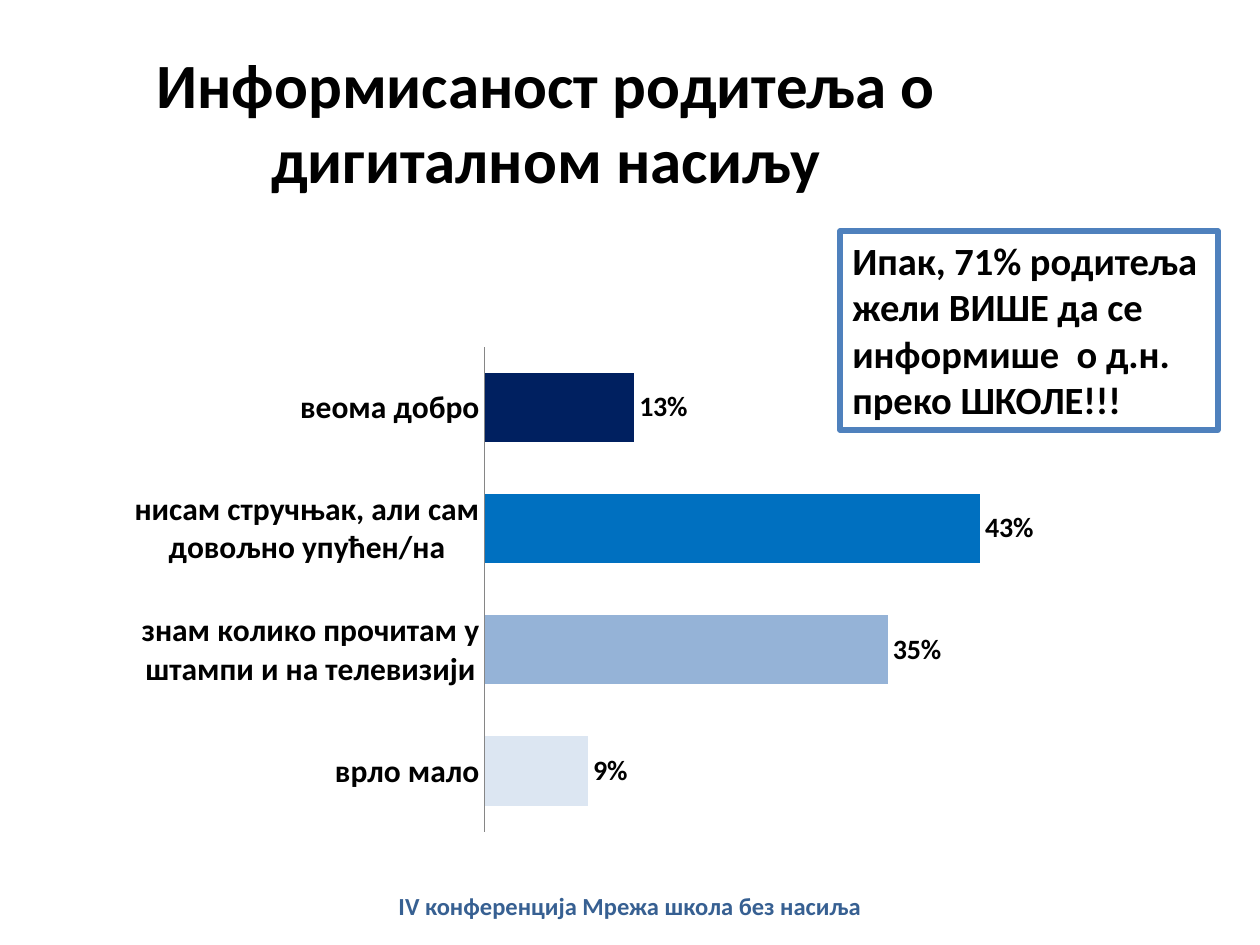
from dataclasses import dataclass

from lxml.etree import SubElement
from pptx import Presentation
from pptx.chart.data import CategoryChartData
from pptx.dml.color import RGBColor
from pptx.enum.chart import XL_CHART_TYPE, XL_LABEL_POSITION, XL_TICK_LABEL_POSITION, XL_TICK_MARK
from pptx.enum.shapes import MSO_SHAPE
from pptx.enum.text import MSO_ANCHOR, PP_ALIGN
from pptx.oxml import parse_xml
from pptx.oxml.ns import nsdecls, qn
from pptx.util import Emu, Pt

EMU_PER_PX = 914400 / 126
FONT = "Calibri"
COLORS = {
    "text": "000000",
    "footer": "376092",
    "accent": "4F81BD",
    "axis": "868686",
    "outline": "C00000",
}


@dataclass(frozen=True)
class Box:
    left: int
    top: int
    width: int
    height: int

    def emu(self) -> tuple[Emu, Emu, Emu, Emu]:
        return px(self.left), px(self.top), px(self.width), px(self.height)


@dataclass(frozen=True)
class Answer:
    label: str
    share: float
    color: str


# Bars run from the bottom of the chart upwards
ANSWERS = [
    Answer("врло мало", 0.09, "DCE6F2"),
    Answer("знам колико прочитам у штампи и на телевизији", 0.35, "95B3D7"),
    Answer("нисам стручњак, али сам довољно упућен/на", 0.43, "0070C0"),
    Answer("веома добро", 0.13, "002060"),
]


def px(length: int) -> Emu:
    return Emu(round(length * EMU_PER_PX))


def rgb(name: str) -> RGBColor:
    return RGBColor.from_string(COLORS[name])


def style_font(font, size: int, color: str = "text") -> None:
    font.name, font.size, font.bold = FONT, Pt(size), True
    font.color.rgb = rgb(color)


def add_run(paragraph, text: str, size: int, color: str = "text"):
    run = paragraph.add_run()
    run.text = text
    style_font(run.font, size, color)
    return run


def outline_run(run, color: str) -> None:
    run.font._element.insert(0, parse_xml(
        f'<a:ln {nsdecls("a")} w="9525"><a:solidFill>'
        f'<a:srgbClr val="{COLORS[color]}"/></a:solidFill></a:ln>'))


def set_inner_plot(chart, x: float, y: float, w: float, h: float) -> None:
    plot_area = chart._chartSpace.chart.plotArea
    for old_layout in plot_area.findall(qn("c:layout")):
        plot_area.remove(old_layout)
    layout = parse_xml(f'<c:layout {nsdecls("c")}><c:manualLayout/></c:layout>')
    settings = {"layoutTarget": "inner", "xMode": "edge", "yMode": "edge",
                "x": x, "y": y, "w": w, "h": h}
    for tag, value in settings.items():
        SubElement(layout[0], qn(f"c:{tag}")).set("val", str(value))
    plot_area.insert(0, layout)


def add_title(slide, box: Box, text: str) -> None:
    title = slide.shapes.title
    title.left, title.top, title.width, title.height = box.emu()
    frame = title.text_frame
    frame.word_wrap = True
    frame.vertical_anchor = MSO_ANCHOR.MIDDLE
    frame.paragraphs[0].alignment = PP_ALIGN.CENTER
    add_run(frame.paragraphs[0], text, 36)


def add_answer_chart(slide, box: Box, answers: list[Answer]) -> None:
    data = CategoryChartData(number_format="0%")
    data.categories = [answer.label for answer in answers]
    data.add_series("Series 1", [answer.share for answer in answers])
    chart = slide.shapes.add_chart(XL_CHART_TYPE.BAR_CLUSTERED, *box.emu(), data).chart
    chart.has_legend = chart.has_title = False
    chart.font.name, chart.font.size = FONT, Pt(10)
    chart.font.color.rgb = rgb("text")
    set_inner_plot(chart, 0.39, 0.111, 0.61, 0.855)

    # Axes
    answer_axis, share_axis = chart.category_axis, chart.value_axis
    answer_axis.major_tick_mark = XL_TICK_MARK.NONE
    answer_axis.tick_label_position = XL_TICK_LABEL_POSITION.NEXT_TO_AXIS
    answer_axis.format.line.color.rgb = rgb("axis")
    style_font(answer_axis.tick_labels.font, 18)
    share_axis.minimum_scale, share_axis.maximum_scale = 0, 0.5
    share_axis.has_major_gridlines = False
    share_axis.visible = False

    # Bars and their labels
    plot = chart.plots[0]
    plot.gap_width, plot.overlap = 75, -25
    plot.vary_by_categories = False
    series = plot.series[0]
    series.format.fill.solid()
    series.format.fill.fore_color.rgb = rgb("accent")
    for index, answer in enumerate(answers):
        fill = series.points[index].format.fill
        fill.solid()
        fill.fore_color.rgb = RGBColor.from_string(answer.color)
    labels = series.data_labels
    labels.show_value = True
    labels.number_format, labels.number_format_is_linked = "0%", False
    labels.position = XL_LABEL_POSITION.OUTSIDE_END
    style_font(labels.font, 16)


def add_callout(slide, box: Box) -> None:
    callout = slide.shapes.add_shape(MSO_SHAPE.RECTANGLE, *box.emu())
    callout.shadow.inherit = False
    callout.fill.background()
    callout.line.color.rgb = rgb("accent")
    callout.line.width = Pt(3)
    frame = callout.text_frame
    frame.word_wrap = True
    frame.vertical_anchor = MSO_ANCHOR.TOP
    message = frame.paragraphs[0]
    message.alignment = PP_ALIGN.LEFT
    add_run(message, "Ипак, 71% родитеља жели ", 22)
    outline_run(add_run(message, "ВИШЕ", 22), "outline")
    add_run(message, " да се информише  о д.н. преко ШКОЛЕ!!!", 22)


def add_footer(slide, box: Box, text: str) -> None:
    frame = slide.shapes.add_textbox(*box.emu()).text_frame
    frame.word_wrap = True
    frame.vertical_anchor = MSO_ANCHOR.TOP
    frame.margin_top = frame.margin_bottom = 0
    frame.paragraphs[0].alignment = PP_ALIGN.CENTER
    add_run(frame.paragraphs[0], text, 14, "footer")


def main() -> None:
    presentation = Presentation()
    presentation.slide_width, presentation.slide_height = px(1260), px(945)
    slide = presentation.slides.add_slide(presentation.slide_layouts[5])
    add_title(slide, Box(63, 42, 966, 158), "Информисаност родитеља о дигиталном насиљу")
    add_answer_chart(slide, Box(116, 284, 945, 567), ANSWERS)
    add_callout(slide, Box(840, 231, 378, 199))
    add_footer(slide, Box(0, 891, 1260, 54), "IV конференција Мрежа школа без насиља")
    presentation.save("out.pptx")


if __name__ == "__main__":
    main()
